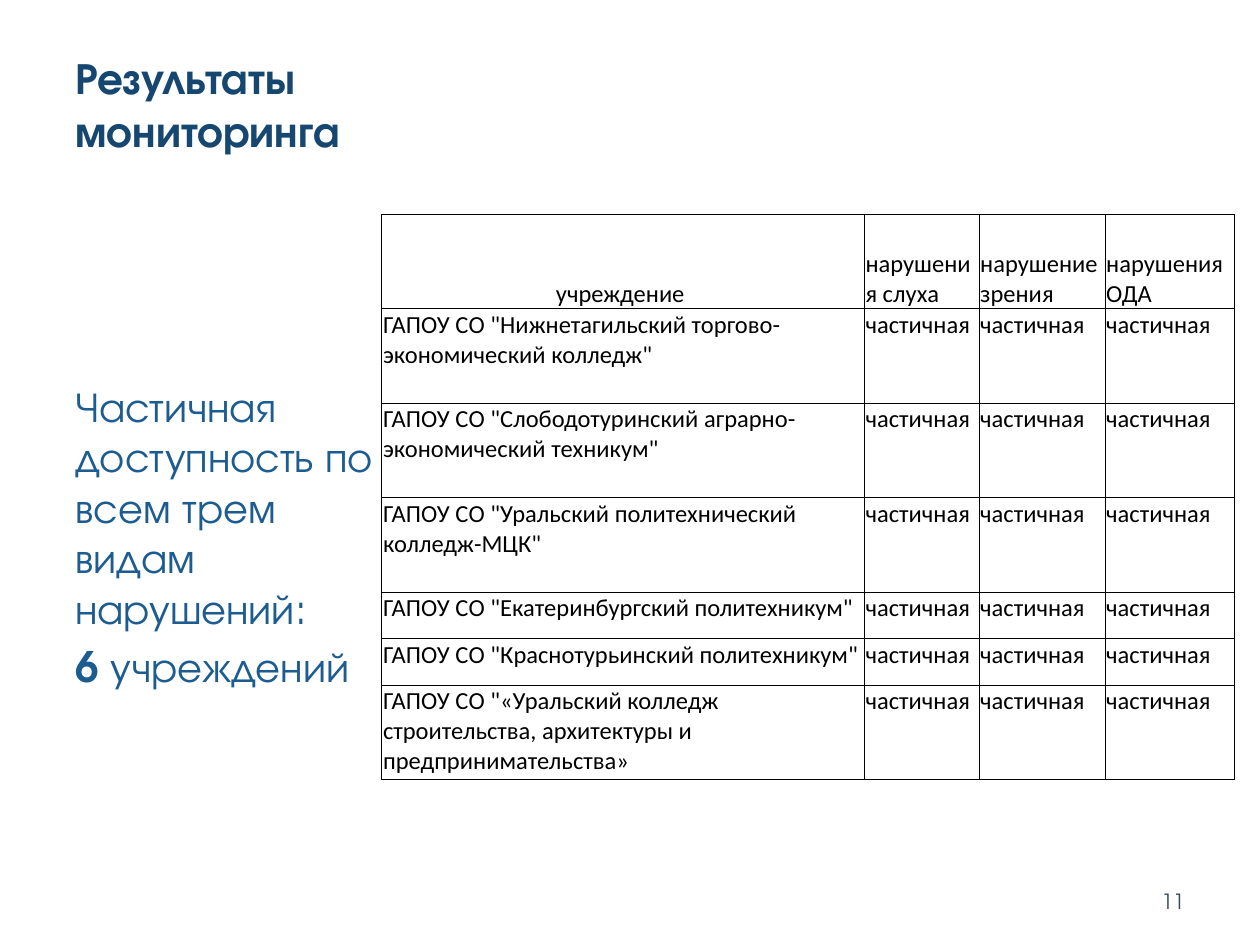
from lxml.etree import SubElement
from pptx import Presentation
from pptx.dml.color import RGBColor
from pptx.enum.text import MSO_ANCHOR as Anchor, PP_ALIGN as Align
from pptx.oxml.ns import qn
from pptx.util import Inches, Pt

COLORS = {"title": "164770", "body": "1C5C90", "number": "3A4C5B", "table": "000000"}
HEADING = "TeX Gyre Adventor"
HEADERS = ["учреждение ", "нарушения слуха", "нарушение зрения", "нарушения ОДА"]
COLLEGES = [
    'ГАПОУ СО "Нижнетагильский торгово-экономический колледж"',
    'ГАПОУ СО "Слободотуринский аграрно-экономический техникум"',
    'ГАПОУ СО "Уральский политехнический колледж-МЦК"',
    'ГАПОУ СО "Екатеринбургский политехникум"',
    'ГАПОУ СО "Краснотурьинский политехникум"',
    'ГАПОУ СО "«Уральский колледж строительства, архитектуры и предпринимательства»',
]
COL_WIDTHS = [3.83, 0.91, 1.0, 1.03]
ROW_HEIGHTS = [0.75, 0.75, 0.75, 0.75, 0.37, 0.37, 0.75]


def style(font, name, size, color, bold=False):
    """Set the face, size, colour and weight of a font."""
    font.name, font.size, font.bold = name, Pt(size), bold
    font.color.rgb = RGBColor.from_string(COLORS[color])


def add_text(s, box, anchor=Anchor.TOP):
    """Add a wrapping text box and return its text frame."""
    tf = s.shapes.add_textbox(*(Inches(v) for v in box)).text_frame
    tf.word_wrap = True
    tf.vertical_anchor = anchor
    return tf


def add_title(s, box):
    """Place the slide title above the foot of its box."""
    tf = add_text(s, box, Anchor.BOTTOM)
    tf.margin_bottom = Inches(0.33)
    tf.text = "Результаты мониторинга"
    style(tf.paragraphs[0].runs[0].font, HEADING, 25.2, "title", True)


def add_borders(cell):
    """Draw a thin line on all four sides of a cell."""
    tc_pr = cell._tc.get_or_add_tcPr()
    for i, side in enumerate(("a:lnL", "a:lnR", "a:lnT", "a:lnB")):
        ln = tc_pr.makeelement(qn(side), {"w": str(Pt(0.5))})
        fill = SubElement(ln, qn("a:solidFill"))
        SubElement(fill, qn("a:srgbClr"), val=COLORS["table"])
        tc_pr.insert(i, ln)


def add_results(s, box):
    """Place the table of colleges and their accessibility."""
    rows = [HEADERS] + [[name] + ["частичная"] * 3 for name in COLLEGES]
    shape = s.shapes.add_table(len(rows), len(HEADERS), *(Inches(v) for v in box))
    table = shape.table
    table.first_row = table.horz_banding = False
    for col, width in zip(table.columns, COL_WIDTHS):
        col.width = Inches(width)
    for i, (row, height) in enumerate(zip(table.rows, ROW_HEIGHTS)):
        row.height = Inches(height)
        for cell, text in zip(row.cells, rows[i]):
            cell.fill.background()
            add_borders(cell)
            cell.margin_left = cell.margin_right = cell.margin_top = Inches(0.01)
            cell.margin_bottom = 0
            cell.vertical_anchor = Anchor.TOP if i else Anchor.BOTTOM
            cell.text = text
            style(cell.text_frame.paragraphs[0].runs[0].font, "Calibri", 14, "table")
    table.cell(0, 0).text_frame.paragraphs[0].alignment = Align.CENTER


def add_summary(s, box):
    """Place the summary beside the table."""
    tf = add_text(s, box)
    tf.margin_top = Inches(1.47)
    tf.text = "Частичная доступность по всем трем видам нарушений:"
    style(tf.paragraphs[0].runs[0].font, HEADING, 24, "body")
    p = tf.add_paragraph()
    p.space_before = Pt(4.8)
    for text, bold in (("6", True), (" учреждений", False)):
        r = p.add_run()
        r.text = text
        style(r.font, HEADING, 24, "body", bold)


def add_number(s, box):
    """Place the slide number."""
    tf = add_text(s, box, Anchor.MIDDLE)
    tf.text = "11"
    p = tf.paragraphs[0]
    p.alignment = Align.RIGHT
    style(p.runs[0].font, HEADING, 12, "number")


def main():
    """Build and save the slide."""
    prs = Presentation()
    prs.slide_width, prs.slide_height = Inches(10), Inches(7.5)
    s = prs.slides.add_slide(prs.slide_layouts[6])
    add_title(s, (0.5, 0.3, 3.29, 1.27))
    add_results(s, (3.03, 1.7, 6.77, 4.49))
    add_summary(s, (0.5, 1.55, 2.77, 5.15))
    add_number(s, (7.17, 6.95, 2.33, 0.4))
    prs.save("out.pptx")


if __name__ == "__main__":
    main()
